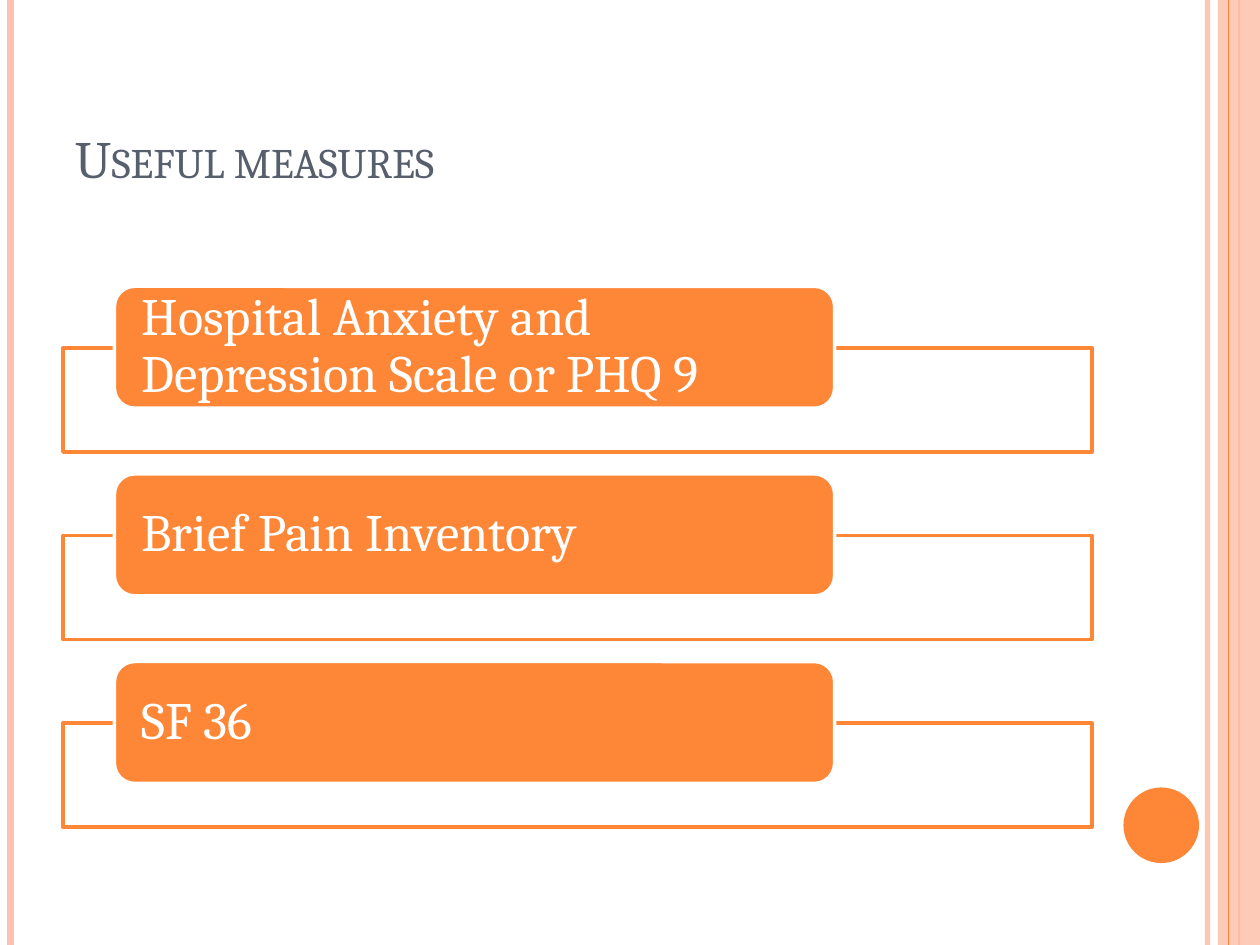
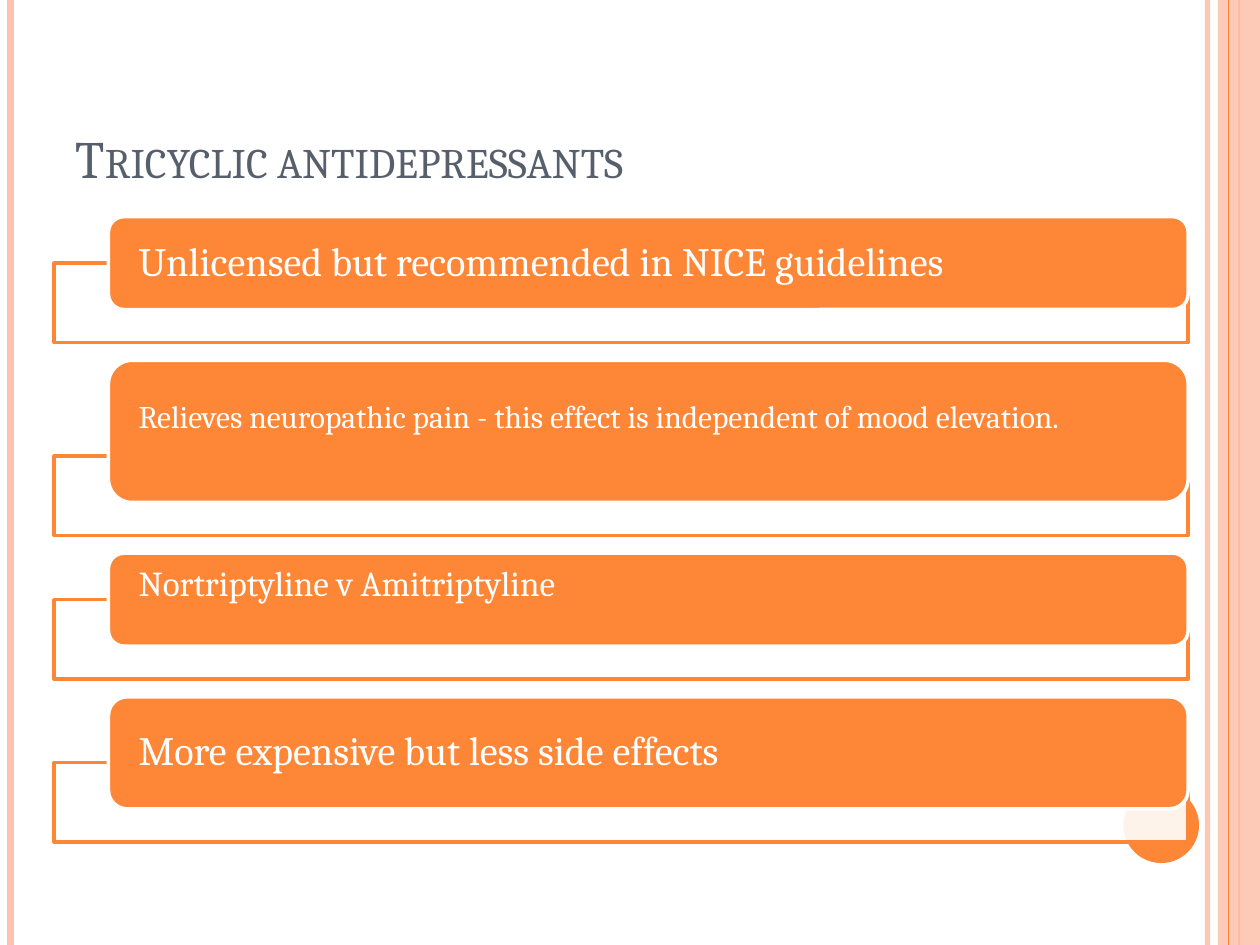
from lxml import etree
from pptx import Presentation
from pptx.dml import color
from pptx.enum import shapes, text
from pptx.oxml import ns
from pptx.util import Pt

WIDTH, HEIGHT = 720, 540
ORANGE, PEACH, SLATE, WHITE = "FE8637", "FEC3AE", "575F6D", "FFFFFF"
FONT = "Cambria"
CORNER_INSET = 0.05  # text inset of a rounded corner, per unit of height


def rgb(value):
    return color.RGBColor.from_string(value)


def apply(target, values):
    for name, value in values.items():
        setattr(target, name, value)


def set_alpha(properties, percent):
    """Make the first solid colour under the given XML element translucent."""
    solid = properties.find(".//" + ns.qn("a:srgbClr"))
    etree.SubElement(solid, ns.qn("a:alpha"), val=str(percent * 1000))


class Deck:
    def __init__(self):
        self.presentation = Presentation()
        apply(self.presentation, {"slide_width": Pt(WIDTH), "slide_height": Pt(HEIGHT)})
        self.slide = None

    def add_slide(self, title):
        layout = self.presentation.slide_layouts.get_by_name("Title Only")
        self.slide = self.presentation.slides.add_slide(layout)
        self.background()
        self.title(title)

    def background(self):
        self.rule(690, PEACH, 3, alpha=93)
        self.rule(6, PEACH, 4.5)
        self.rule(708, ORANGE, 1.5)
        self.shape(shapes.MSO_SHAPE.RECTANGLE, 696, 0, 24, HEIGHT, PEACH, alpha=87)
        self.rule(702, ORANGE, 0.75)
        self.shape(shapes.MSO_SHAPE.OVAL, 642, 450, 43.2, 43.2, ORANGE)

    def rule(self, x, line, width, alpha=None):
        connector = self.slide.shapes.add_connector(
            shapes.MSO_CONNECTOR.STRAIGHT, Pt(x), Pt(0), Pt(x), Pt(HEIGHT))
        connector.line.color.rgb = rgb(line)
        connector.line.width = Pt(width)
        properties = connector._element.spPr
        if alpha:
            set_alpha(properties, alpha)
        etree.SubElement(properties, ns.qn("a:effectLst"))

    def shape(self, kind, left, top, width, height, fill, line=None, alpha=None):
        shape = self.slide.shapes.add_shape(
            kind, Pt(left), Pt(top), Pt(width), Pt(height))
        shape.shadow.inherit = False
        shape.fill.solid()
        shape.fill.fore_color.rgb = rgb(fill)
        if alpha:
            set_alpha(shape._element.spPr, alpha)
        if line:
            shape.line.color.rgb = rgb(line)
            shape.line.width = Pt(2)
        else:
            shape.line.fill.background()
        return shape

    def set_text(self, shape, words, size, font_color, frame_format, spacing=1.0):
        frame = shape.text_frame
        apply(frame, {"word_wrap": True, "auto_size": text.MSO_AUTO_SIZE.NONE,
                      **frame_format})
        paragraph = frame.paragraphs[0]
        apply(paragraph, {"alignment": text.PP_ALIGN.LEFT, "line_spacing": spacing})
        run = paragraph.add_run()
        run.text = words
        apply(run.font, {"name": FONT, "size": Pt(size)})
        run.font.color.rgb = rgb(font_color)
        return run

    def title(self, words):
        title = self.slide.shapes.title
        apply(title, {"left": Pt(36), "top": Pt(21.6),
                      "width": Pt(588), "height": Pt(90)})
        run = self.set_text(title, words, 30, SLATE,
                            {"vertical_anchor": text.MSO_ANCHOR.BOTTOM})
        run.font._element.set("cap", "small")

    def label(self, left, top, width, height, words, size, inset, raised):
        """Rounded label; a raised text sits half a line above the middle."""
        label = self.shape(shapes.MSO_SHAPE.ROUNDED_RECTANGLE,
                           left, top, width, height, ORANGE, WHITE)
        margin = Pt(inset - CORNER_INSET * height)
        self.set_text(label, words, size, WHITE, {
            "vertical_anchor": text.MSO_ANCHOR.MIDDLE,
            "margin_left": margin, "margin_right": margin, "margin_top": Pt(0),
            "margin_bottom": Pt(size if raised else 0),
        }, spacing=1.0 if raised else 0.9)

    def label_list(self, items, top, frame, label, overhang, gap, inset):
        """Stack labels, each over an outlined frame that shows below it."""
        frame_left, frame_width, frame_height = frame
        label_left, label_width = label
        for words, height, size, raised in items:
            frame_bottom = top + height + overhang
            self.shape(shapes.MSO_SHAPE.RECTANGLE, frame_left,
                       frame_bottom - frame_height, frame_width, frame_height,
                       WHITE, ORANGE, alpha=90)
            self.label(label_left, top, label_width, height,
                       words, size, inset, raised)
            top = frame_bottom + gap


def main():
    deck = Deck()

    # Measures: equal labels
    deck.add_slide("Useful measures")
    measures = ["Hospital Anxiety and Depression Scale or PHQ 9",
                "Brief Pain Inventory", "SF 36"]
    deck.label_list([(words, 69.7, 30, False) for words in measures],
                    top=163.6, frame=(36, 588, 59.5), label=(65.4, 411.6),
                    overhang=25, gap=12.5, inset=15.6)

    # Antidepressants: label, height, text size, raised text
    deck.add_slide("Tricyclic antidepressants")
    facts = [
        ("Unlicensed but recommended in NICE guidelines", 53.1, 23, False),
        ("Relieves neuropathic pain - this effect is independent of mood elevation.",
         81.2, 18, True),
        ("Nortriptyline v Amitriptyline", 53.1, 20, True),
        ("More expensive but less side effects", 64, 23, False),
    ]
    deck.label_list(facts, top=123.8, frame=(31, 648, 45.4), label=(62, 617),
                    overhang=18.9, gap=10.1, inset=17.3)

    deck.presentation.save("out.pptx")


if __name__ == "__main__":
    main()
